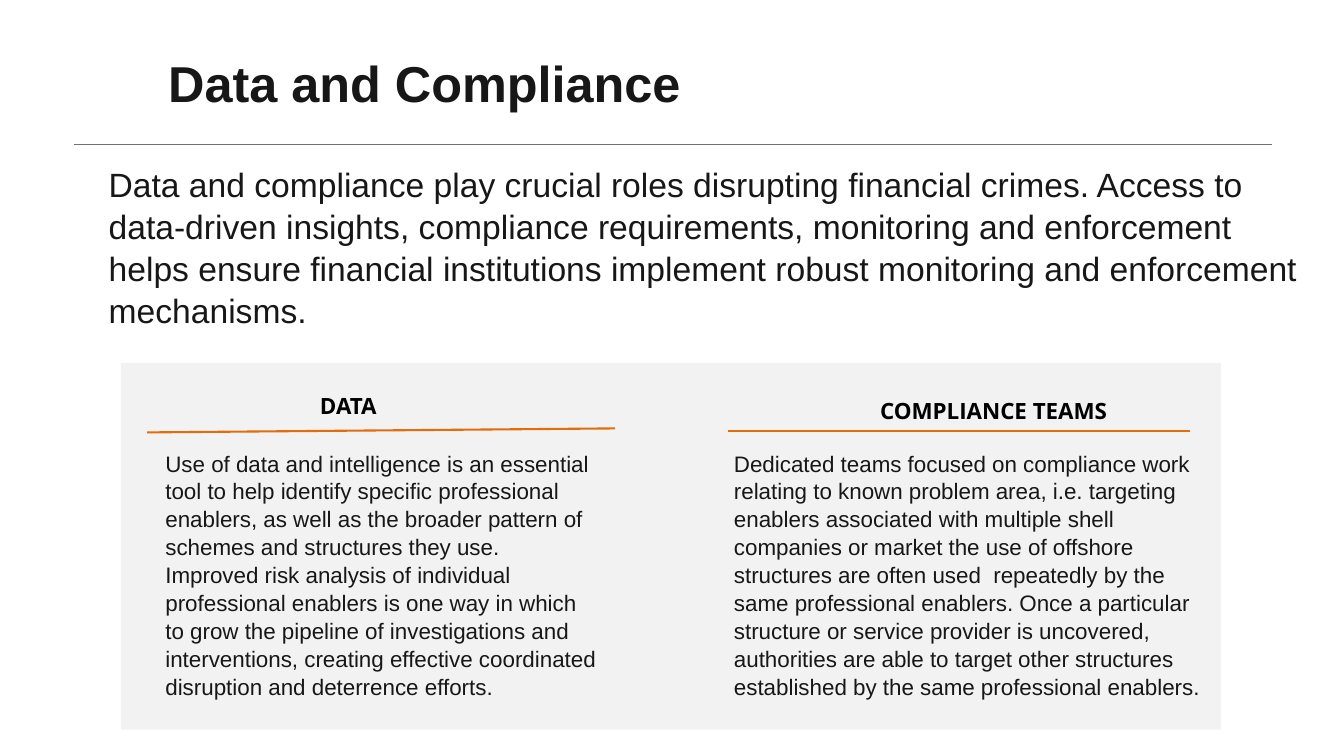
"""Build the Data and Compliance slide with two topic columns."""
from lxml.etree import SubElement
from pptx import Presentation
from pptx.dml.color import RGBColor
from pptx.enum.shapes import MSO_CONNECTOR, MSO_SHAPE
from pptx.enum.text import MSO_ANCHOR, PP_ALIGN
from pptx.oxml.ns import qn
from pptx.util import Pt

PX = 9144
COLORS = {"ink": "171717", "head": "000000", "rule": "727272",
          "panel": "F2F2F2", "accent": "E46C0A"}

deck = Presentation()
deck.slide_width, deck.slide_height = 1333 * PX, 750 * PX
slide = deck.slides.add_slide(deck.slide_layouts[6])


def add_text(text, box, size, color="ink", face="Arial", bold=False,
             align=PP_ALIGN.LEFT, anchor=MSO_ANCHOR.TOP, inset=0, spacing=1.0):
    frame = slide.shapes.add_textbox(*[n * PX for n in box]).text_frame
    frame.word_wrap = True
    frame.vertical_anchor = anchor
    frame.margin_left = frame.margin_right = inset * PX
    frame.margin_top = frame.margin_bottom = inset // 2 * PX
    para = frame.paragraphs[0]
    para.text = text
    para.alignment = align
    para.line_spacing = spacing
    font = para.font
    font.name, font.size, font.bold = face, Pt(size), bold
    font.color.rgb = RGBColor.from_string(COLORS[color])


def add_line(ends, color, width):
    line = slide.shapes.add_connector(MSO_CONNECTOR.STRAIGHT, *[n * PX for n in ends])
    line.line.color.rgb = RGBColor.from_string(COLORS[color])
    line.line.width = Pt(width)
    SubElement(line._element.spPr, qn("a:effectLst"))


add_line((73, 143, 1262, 143), "rule", 0.5)
add_text("Data and Compliance", (157, 26, 1081, 112), 36, bold=True,
         anchor=MSO_ANCHOR.MIDDLE, inset=10)

panel = slide.shapes.add_shape(MSO_SHAPE.RECTANGLE, 120 * PX, 360 * PX, 1091 * PX, 364 * PX)
panel.shadow.inherit = False
panel.fill.solid()
panel.fill.fore_color.rgb = RGBColor.from_string(COLORS["panel"])
panel.line.fill.background()

topics = [
    ("DATA", (151, 389, 389, 34), (146, 429, 610, 425), (164, 445, 429, 242),
     "Use of data and intelligence is an essential tool to help identify specific "
     "professional enablers, as well as the broader pattern of schemes and structures "
     "they use. Improved risk analysis of individual professional enablers is one way "
     "in which to grow the pipeline of investigations and interventions, creating "
     "effective coordinated disruption and deterrence efforts."),
    ("COMPLIANCE TEAMS", (791, 394, 389, 34), (722, 428, 1180, 428), (728, 445, 474, 242),
     "Dedicated teams focused on compliance work relating to known problem area, i.e. "
     "targeting enablers associated with multiple shell companies or market the use of "
     "offshore structures are often used  repeatedly by the same professional enablers. "
     "Once a particular structure or service provider is uncovered, authorities are able "
     "to target other structures established by the same professional enablers."),
]
for head, top, rule, body, text in topics:
    add_text(text, body, 16, spacing=1.04)
    add_text(head, top, 16, "head", "Open Sans", True, PP_ALIGN.CENTER)
    add_line(rule, "accent", 1.5)

add_text("Data and compliance play crucial roles disrupting financial crimes. Access to "
         "data-driven insights, compliance requirements, monitoring and enforcement helps "
         "ensure financial institutions implement robust monitoring and enforcement "
         "mechanisms.", (98, 156, 1200, 172), 24, inset=10, spacing=1.04)

deck.save("out.pptx")
